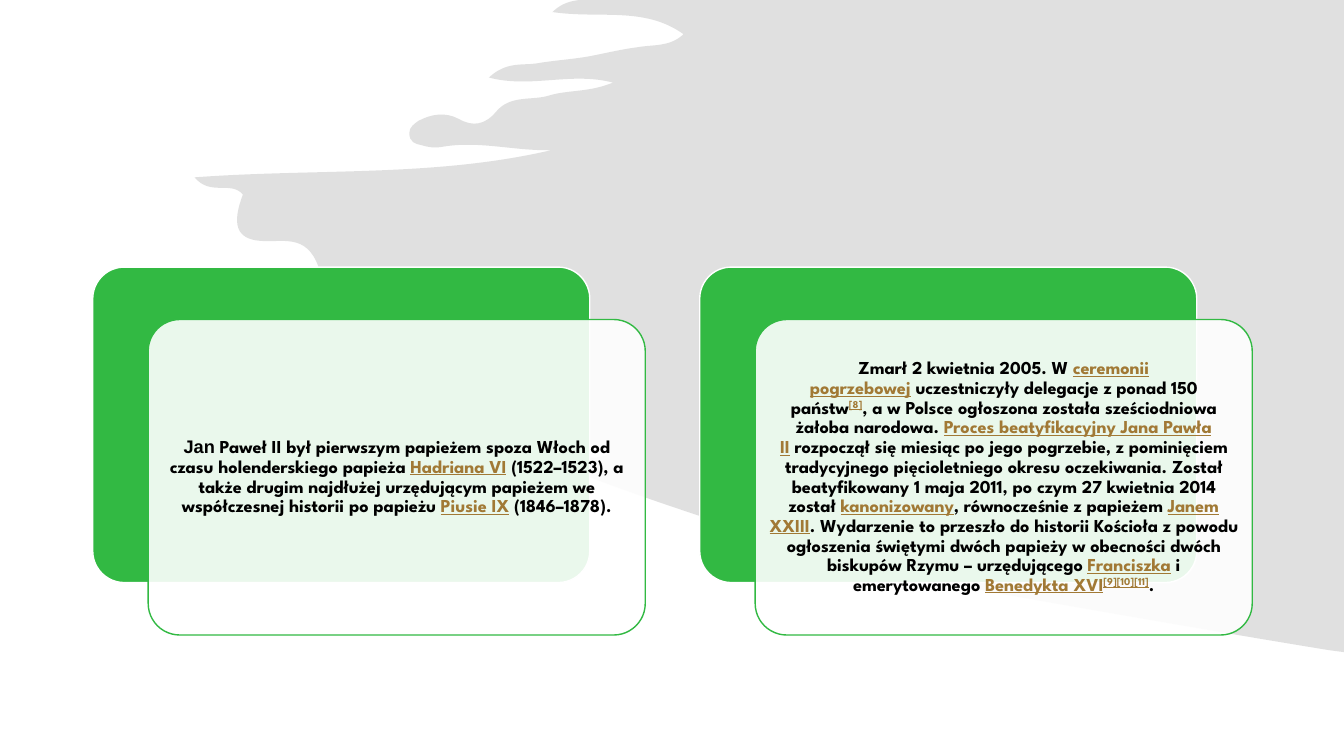
"""Build the slide with two layered text cards over a grey brushed backdrop."""
from dataclasses import dataclass

from lxml import etree
from pptx import Presentation
from pptx.dml.color import RGBColor
from pptx.enum.shapes import MSO_SHAPE
from pptx.enum.text import MSO_ANCHOR, PP_ALIGN
from pptx.oxml.ns import qn
from pptx.util import Inches, Pt

ROUND_RECT = MSO_SHAPE.ROUNDED_RECTANGLE
MIDDLE = MSO_ANCHOR.MIDDLE
CENTER = PP_ALIGN.CENTER
TIE, HARD_SPACE = "~", chr(160)


@dataclass(frozen=True)
class Theme:
    white: RGBColor = RGBColor.from_string("FFFFFF")
    grey: RGBColor = RGBColor.from_string("D9D9D9")
    green: RGBColor = RGBColor.from_string("32B943")
    black: RGBColor = RGBColor.from_string("000000")
    link: RGBColor = RGBColor.from_string("A17935")
    font: str = "League Spartan"
    alt_font: str = "Arial"
    body: Pt = Pt(13)
    border: Pt = Pt(1)


THEME = Theme()

BRUSH_CURVES = [
    (5.67, 0.01, 5.57, 0.03, 5.48, 0.12), (5.95, 0.19, 6.39, 0.06, 6.78, 0.34),
    (6.64, 0.47, 6.48, 0.44, 6.32, 0.47), (6.16, 0.49, 6, 0.53, 5.84, 0.56),
    (5.67, 0.59, 5.49, 0.6, 5.32, 0.63), (5.18, 0.65, 5.02, 0.61, 4.85, 0.77),
    (5.27, 0.88, 5.66, 0.71, 6.08, 0.82), (5.84, 0.92, 5.63, 0.89, 5.44, 0.95),
    (5.27, 1, 5.06, 0.94, 4.92, 1.11), (4.81, 1.24, 4.69, 1.26, 4.55, 1.18),
    (4.42, 1.11, 4.28, 1.13, 4.15, 1.2), (4.11, 1.23, 4.06, 1.26, 4.06, 1.32),
    (4.06, 1.41, 4.12, 1.43, 4.18, 1.44), (4.24, 1.46, 4.31, 1.47, 4.37, 1.46),
    (4.74, 1.39, 5.1, 1.5, 5.47, 1.49), (4.31, 1.76, 3.14, 1.67, 1.93, 1.76),
    (2.09, 1.95, 2.29, 1.79, 2.41, 1.93), (2.3, 2.22, 2.34, 2.37, 2.58, 2.39),
    (2.8, 2.41, 3.04, 2.31, 3.16, 2.65), (3.2, 2.76, 3.41, 2.73, 3.55, 2.75),
    (3.84, 2.79, 4.14, 2.75, 4.42, 2.88), (4.53, 2.93, 4.6, 2.97, 4.55, 3.11),
    (4.49, 3.25, 4.56, 3.3, 4.66, 3.36), (4.73, 3.4, 4.83, 3.39, 4.89, 3.52),
    (4.28, 3.5, 3.69, 3.4, 3.09, 3.5), (3.75, 3.74, 4.47, 3.73, 5.12, 4.02),
    (5.1, 4.12, 4.95, 4.07, 4.94, 4.22), (5.28, 4.38, 5.69, 4.27, 6.05, 4.5),
    (5.84, 4.61, 5.65, 4.44, 5.45, 4.54), (5.52, 4.69, 8.4, 5.61, 8.92, 5.71),
    (9.78, 5.87, 11.95, 6.25, 13.18, 6.45),
]

CARDS = [
    (0.92, [
        ("Jan", "alt"),
        (" Paweł II był pierwszym papieżem spoza Włoch od czasu holenderskiego papieża~", "text"),
        ("Hadriana VI", "link"),
        ("~(1522–1523), a także drugim najdłużej urzędującym papieżem we "
         "współczesnej historii po papieżu~", "text"),
        ("Piusie IX", "link"),
        ("~(1846–1878).", "text"),
    ]),
    (6.94, [
        ("Zmarł 2 kwietnia 2005. W~", "text"),
        ("ceremonii pogrzebowej", "link"),
        ("~uczestniczyły delegacje z ponad 150 państw", "text"),
        ("[8]", "note"),
        (", a w Polsce ogłoszona została sześciodniowa żałoba narodowa.~", "text"),
        ("Proces beatyfikacyjny Jana Pawła II", "link"),
        ("~rozpoczął się miesiąc po jego pogrzebie, z pominięciem tradycyjnego "
         "pięcioletniego okresu oczekiwania. Został beatyfikowany 1 maja 2011, "
         "po czym 27 kwietnia 2014 został~", "text"),
        ("kanonizowany", "link"),
        (", równocześnie z papieżem~", "text"),
        ("Janem XXIII", "link"),
        (". Wydarzenie to przeszło do historii Kościoła z powodu ogłoszenia "
         "świętymi dwóch papieży w obecności dwóch biskupów Rzymu – urzędującego~", "text"),
        ("Franciszka", "link"),
        ("~i emerytowanego~", "text"),
        ("Benedykta XVI", "link"),
        ("[9][10][11]", "note"),
        (".", "text"),
    ]),
]
CARD_W, CARD_H, CARD_TOP = 4.93, 3.13, 2.65
SHIFT_X, SHIFT_Y = 0.55, 0.52
TEXT_PAD = 0.09


def paint(shape, color, opacity=100, border=None):
    shape.shadow.inherit = False
    shape.fill.solid()
    shape.fill.fore_color.rgb = color
    if opacity < 100:
        clr = shape.element.spPr.find(qn("a:solidFill")).find(qn("a:srgbClr"))
        etree.SubElement(clr, qn("a:alpha")).set("val", str(opacity * 1000))
    if border is None:
        shape.line.fill.background()
    else:
        shape.line.color.rgb = border
        shape.line.width = THEME.border


prs = Presentation()
prs.slide_width, prs.slide_height = Inches(13.33), Inches(7.5)
s = prs.slides.add_slide(prs.slide_layouts[6])
s.background.fill.solid()
s.background.fill.fore_color.rgb = THEME.white

corners = [(5.75, 0)] + [curve[4:] for curve in BRUSH_CURVES] + [(13.33, 6.47)]
builder = s.shapes.build_freeform(Inches(13.33), 0)
builder.add_line_segments([(Inches(x), Inches(y)) for x, y in corners], close=True)
brush = builder.convert_to_shape()
paint(brush, THEME.grey, opacity=80)
segments = list(brush.element.spPr.iter(qn("a:lnTo")))
for segment, curve in zip(segments[1:], BRUSH_CURVES):
    segment_curve = etree.Element(qn("a:cubicBezTo"))
    for x, y in zip(curve[::2], curve[1::2]):
        pt = etree.SubElement(segment_curve, qn("a:pt"))
        pt.set("x", str(Inches(x) - brush.left))
        pt.set("y", str(Inches(y) - brush.top))
    segment.getparent().replace(segment, segment_curve)

for left, runs in CARDS:
    layers = [(0, 0, THEME.green, 100, THEME.white),
              (SHIFT_X, SHIFT_Y, THEME.white, 90, THEME.green)]
    for dx, dy, color, opacity, border in layers:
        sp = s.shapes.add_shape(ROUND_RECT, Inches(left + dx), Inches(CARD_TOP + dy),
                                Inches(CARD_W), Inches(CARD_H))
        sp.adjustments[0] = 0.1
        paint(sp, color, opacity, border)

    box = s.shapes.add_textbox(
        Inches(left + SHIFT_X + TEXT_PAD), Inches(CARD_TOP + SHIFT_Y + TEXT_PAD),
        Inches(CARD_W - 2 * TEXT_PAD), Inches(CARD_H - 2 * TEXT_PAD))
    tf = box.text_frame
    tf.word_wrap = True
    tf.vertical_anchor = MIDDLE
    tf.margin_left = tf.margin_right = tf.margin_top = tf.margin_bottom = Inches(0.05)
    p = tf.paragraphs[0]
    p.alignment = CENTER
    p.line_spacing = 0.9
    for text, kind in runs:
        linked = kind in ("link", "note")
        r = p.add_run()
        r.text = text.replace(TIE, HARD_SPACE)
        r.font.name = THEME.alt_font if kind == "alt" else THEME.font
        r.font.size = THEME.body
        r.font.bold = True
        r.font.underline = linked
        r.font.color.rgb = THEME.link if linked else THEME.black
        if kind == "note":
            r._r.get_or_add_rPr().set("baseline", "30000")

prs.save("out.pptx")
